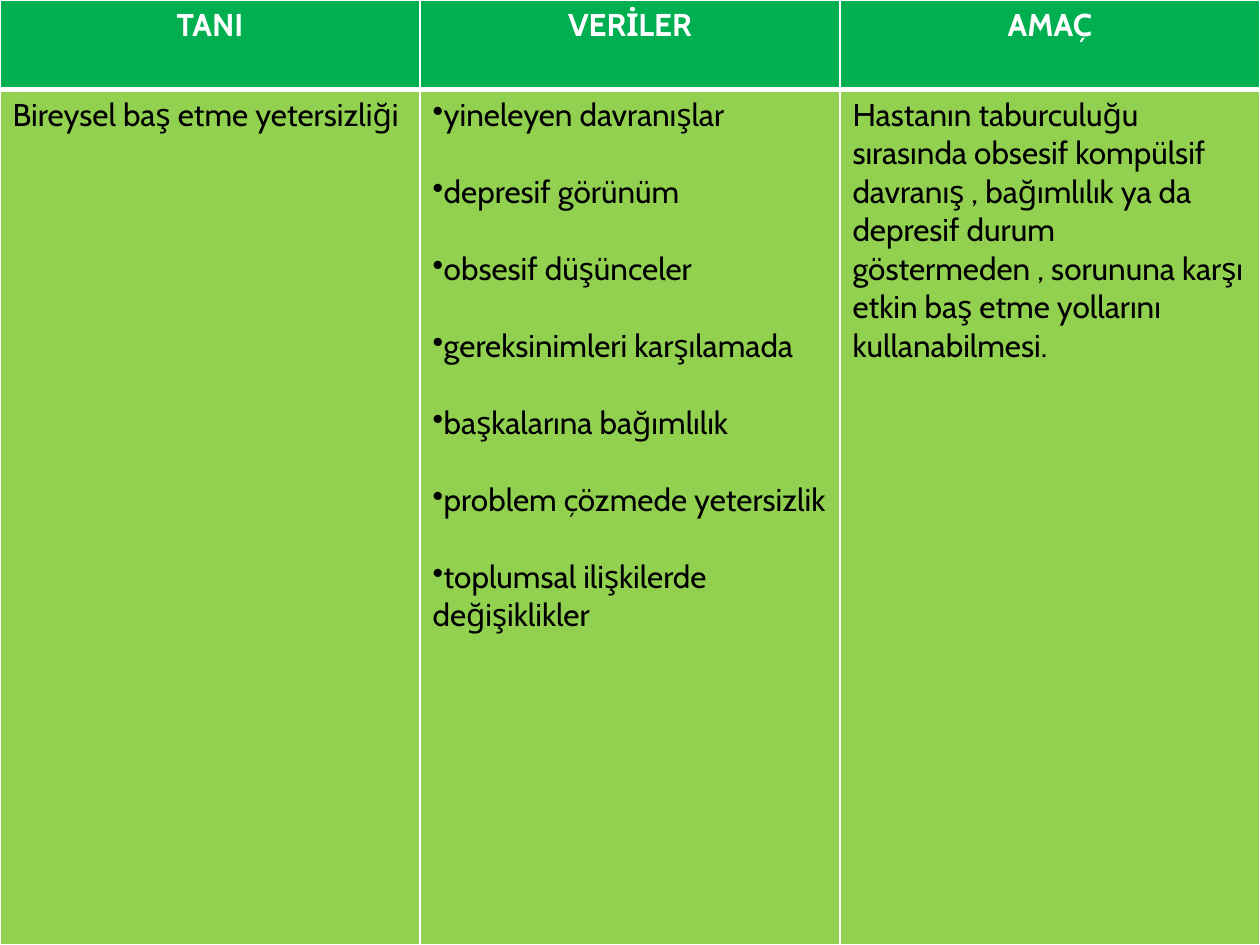
import pptx
import pptx.dml.color
import pptx.enum.text
import pptx.oxml.ns
import pptx.util
from lxml import etree

FONT = "Cabin"
WHITE, BLACK = "FFFFFF", "000000"
HEADER_GREEN, BODY_GREEN = "00B050", "92D050"
HEADER_SHARE = 0.095
THIN, THICK = 1, 3

# Each column: heading, body paragraphs, bulleted or not
COLUMNS = [
    ("TANI", ["Bireysel baş etme yetersizliği"], False),
    ("VERİLER", [
        "yineleyen davranışlar",
        "depresif görünüm",
        "obsesif düşünceler",
        "gereksinimleri karşılamada",
        "başkalarına bağımlılık",
        "problem çözmede yetersizlik",
        "toplumsal ilişkilerde değişiklikler",
    ], True),
    ("AMAÇ", [
        "Hastanın taburculuğu sırasında obsesif kompülsif davranış , "
        "bağımlılık ya da depresif durum göstermeden , sorununa karşı "
        "etkin baş etme yollarını kullanabilmesi."
    ], False),
]


def rgb(value):
    return pptx.dml.color.RGBColor.from_string(value)


def add_element(parent, tag, **attributes):
    return etree.SubElement(parent, pptx.oxml.ns.qn(tag), **attributes)


def set_borders(cell, top, bottom):
    """Draw white borders; they must precede the cell's fill."""
    properties = cell._tc.get_or_add_tcPr()
    for side, width in (("L", THIN), ("R", THIN), ("T", top), ("B", bottom)):
        line = add_element(properties, f"a:ln{side}",
                           w=str(pptx.util.Pt(width)))
        add_element(add_element(line, "a:solidFill"), "a:srgbClr", val=WHITE)


def add_bullet(paragraph):
    properties = paragraph._p.get_or_add_pPr()
    properties.set("marL", "0")
    properties.set("indent", "0")
    add_element(properties, "a:buChar", char="•")


def fill_cell(cell, texts, fill, color, header=False, bulleted=False):
    set_borders(cell, THIN if header else THICK, THICK if header else THIN)
    cell.fill.solid()
    cell.fill.fore_color.rgb = rgb(fill)
    frame = cell.text_frame
    for index, text in enumerate(texts):
        paragraph = frame.add_paragraph() if index else frame.paragraphs[0]
        paragraph.text = text
        if bulleted:
            add_bullet(paragraph)
        if index:
            paragraph.space_before = pptx.util.Pt(22)
        if header:
            paragraph.alignment = pptx.enum.text.PP_ALIGN.CENTER
        paragraph.font.name = FONT
        paragraph.font.size = pptx.util.Pt(18)
        paragraph.font.bold = header
        paragraph.font.color.rgb = rgb(color)


def add_care_plan(slide, left, top, width, height):
    """Place the care plan table in the given box."""
    plan = slide.shapes.add_table(
        2, len(COLUMNS), left, top, width, height).table
    plan.rows[0].height = int(height * HEADER_SHARE)
    plan.rows[1].height = height - plan.rows[0].height
    for index, (heading, body, bulleted) in enumerate(COLUMNS):
        plan.columns[index].width = width // len(COLUMNS)
        fill_cell(plan.cell(0, index), [heading], HEADER_GREEN, WHITE,
                  header=True)
        fill_cell(plan.cell(1, index), body, BODY_GREEN, BLACK,
                  bulleted=bulleted)


def main():
    deck = pptx.Presentation()
    deck.slide_width = pptx.util.Inches(10)
    deck.slide_height = pptx.util.Inches(7.5)
    slide = deck.slides.add_slide(deck.slide_layouts[6])
    # The table covers the whole slide
    add_care_plan(slide, 0, 0, deck.slide_width, deck.slide_height)
    deck.save("out.pptx")


if __name__ == "__main__":
    main()
